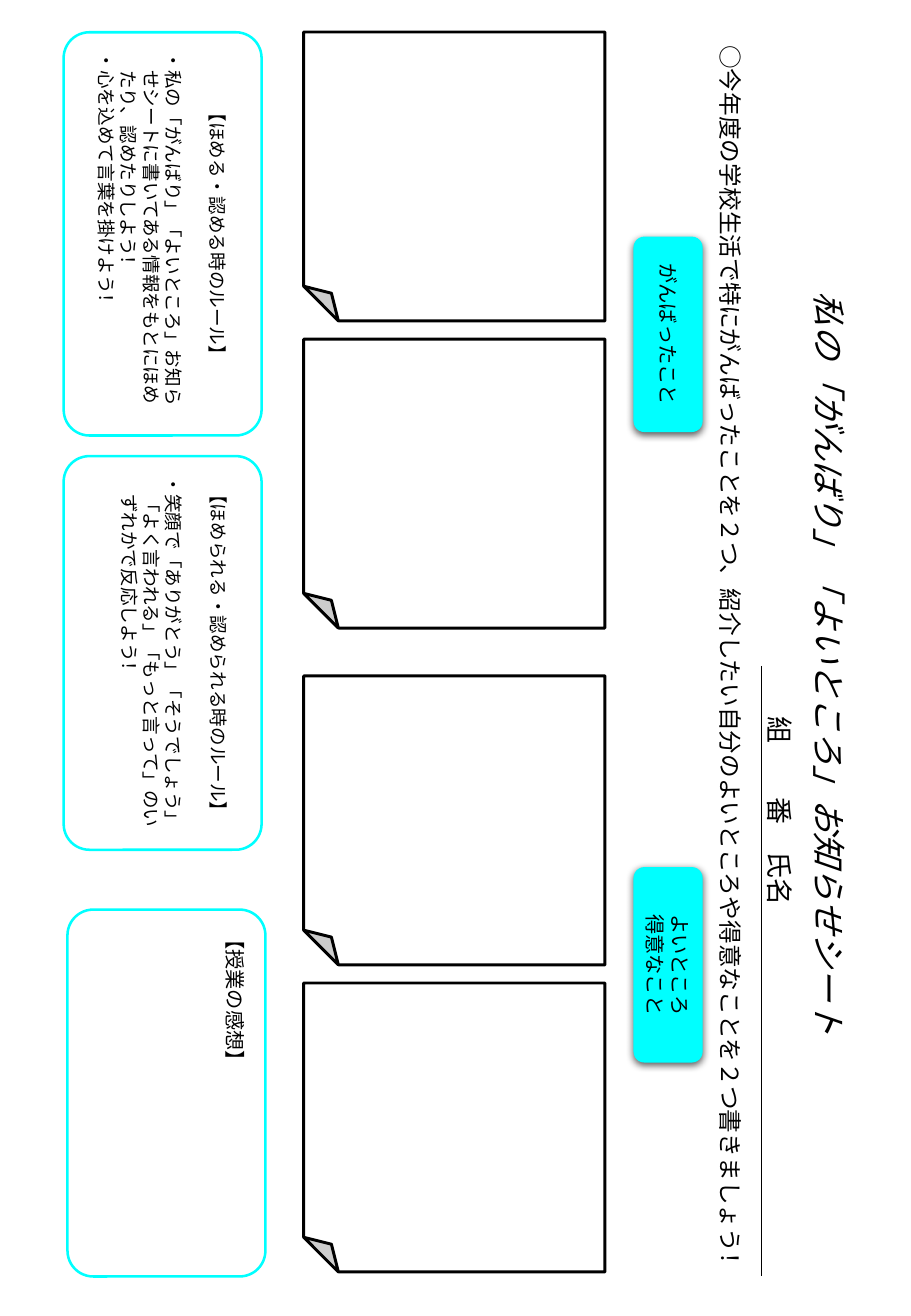
"""Build the rotated worksheet on which pupils share their efforts and strengths."""
import pptx
import pptx.dml.color
import pptx.enum.shapes
import pptx.enum.text
import pptx.oxml
import pptx.oxml.ns
import pptx.util
from lxml import etree

Cm = pptx.util.Cm
Pt = pptx.util.Pt
Align = pptx.enum.text.PP_ALIGN
Anchor = pptx.enum.text.MSO_ANCHOR
Preset = pptx.enum.shapes.MSO_SHAPE
qn = pptx.oxml.ns.qn
FONT = "Noto Sans CJK JP"
BLACK, WHITE, CYAN = "000000", "FFFFFF", "00FFFF"


def color(value):
    return pptx.dml.color.RGBColor.from_string(value)


def write(shape, lines, size, alignment=Align.LEFT, italic=False):
    frame = shape.text_frame
    frame.auto_size = pptx.enum.text.MSO_AUTO_SIZE.NONE
    frame.word_wrap = True
    frame.vertical_anchor = Anchor.MIDDLE
    for index, line in enumerate(lines):
        paragraph = frame.paragraphs[0] if index == 0 else frame.add_paragraph()
        paragraph.alignment = alignment
        paragraph.line_spacing = Pt(size * 1.2)
        run = paragraph.add_run()
        run.text = line
        run.font.name = FONT
        run.font.size = Pt(size)
        run.font.italic = italic
        run.font.color.rgb = color(BLACK)
        etree.SubElement(run.font._element, qn("a:ea"), typeface=FONT)


presentation = pptx.Presentation()
presentation.slide_width = Cm(19.05)
presentation.slide_height = Cm(27.51)
slide = presentation.slides.add_slide(presentation.slide_layouts[5])

title = slide.shapes.title
name_box = slide.shapes.add_textbox(0, 0, 0, 0)
instruction = slide.shapes.add_textbox(0, 0, 0, 0)
for shape, center_x, center_y, length, depth, text, size in [
    (title, 17.35, 13.92, 16.15, 1.12, "私の「がんばり」「よいところ」お知らせシート", 20),
    (name_box, 16.32, 21.12, 12.78, 0.94, "組\t番\t氏名", 16),
    (instruction, 15.28, 13.94, 26.49, 0.86,
     "○今年度の学校生活で特にがんばったことを２つ、紹介したい自分のよいところや得意なことを２つ書きましょう！", 14),
]:
    shape.left, shape.top = Cm(center_x - length / 2), Cm(center_y - depth / 2)
    shape.width, shape.height = Cm(length), Cm(depth)
    shape.rotation = 90
    write(shape, [text], size, italic=shape is title)

name_properties = name_box.text_frame.paragraphs[0]._p.get_or_add_pPr()
tab_list = etree.SubElement(name_properties, qn("a:tabLst"))
for position in (48, 80):
    etree.SubElement(tab_list, qn("a:tab"), pos=str(Pt(position)), algn="l")

name_line = slide.shapes.add_connector(
    pptx.enum.shapes.MSO_CONNECTOR.STRAIGHT, Cm(15.93), Cm(13.92), Cm(15.93), Cm(26.67))
name_line.line.color.rgb = color(BLACK)
name_line.line.width = Pt(0.5)
etree.SubElement(name_line._element.spPr, qn("a:effectLst"))

panels = {}
for name, preset, corner, center_x, center_y, length, depth, fill, outline, width in [
    ("effort", Preset.ROUNDED_RECTANGLE, 0.15, 13.97, 6.99, 4.06, 1.42, CYAN, CYAN, 0.75),
    ("strength", Preset.ROUNDED_RECTANGLE, 0.15, 13.97, 20.17, 4.06, 1.42, CYAN, CYAN, 0.75),
    ("praising", Preset.ROUNDED_RECTANGLE, 0.13, 3.4, 4.89, 8.43, 4.14, WHITE, CYAN, 1.5),
    ("praised", Preset.ROUNDED_RECTANGLE, 0.13, 3.4, 13.65, 8.23, 4.14, WHITE, CYAN, 1.5),
    ("impressions", Preset.ROUNDED_RECTANGLE, 0.13, 3.48, 22.85, 7.67, 4.14, WHITE, CYAN, 1.5),
] + [
    (f"card {pair} {step}", Preset.FOLDED_CORNER, 0.12, 9.5, pair + 6.42 * step,
     6.04, 6.3, WHITE, BLACK, 1.75)
    for pair in (3.69, 17.15) for step in range(2)
]:
    shape = slide.shapes.add_shape(
        preset, Cm(center_x - length / 2), Cm(center_y - depth / 2), Cm(length), Cm(depth))
    shape.rotation = 90
    geometry = shape._element.spPr.find(qn("a:prstGeom"))
    for child in list(geometry):
        geometry.remove(child)
    adjustments = etree.SubElement(geometry, qn("a:avLst"))
    etree.SubElement(adjustments, qn("a:gd"), name="adj", fmla=f"val {round(corner * 100000)}")
    shape.shadow.inherit = False
    shape.fill.solid()
    shape.fill.fore_color.rgb = color(fill)
    shape.line.color.rgb = color(outline)
    shape.line.width = Pt(width)
    panels[name] = shape

for name, lines in [("effort", ["がんばったこと"]), ("strength", ["よいところ", "得意なこと"])]:
    label = panels[name]
    write(label, lines, 12, Align.CENTER)
    label.text_frame.word_wrap = False
    effects = label._element.spPr.find(qn("a:effectLst"))
    shadow = etree.SubElement(
        effects, qn("a:outerShdw"), blurRad=str(Pt(4.5)), dist=str(Pt(1.5)),
        dir="5400000", rotWithShape="0")
    shadow_color = etree.SubElement(shadow, qn("a:srgbClr"), val=BLACK)
    etree.SubElement(shadow_color, qn("a:alpha"), val="63000")

for name, lines in [
    ("praising", ["【ほめる・認める時のルール】", "・私の「がんばり」「よいところ」お知ら",
                  "せシートに書いてある情報をもとにほめ", "たり、認めたりしよう！",
                  "・心を込めて言葉を掛けよう！"]),
    ("praised", ["【ほめられる・認められる時のルール】", "・笑顔で「ありがとう」「そうでしょう」",
                 "「よく言われる」「もっと言って」のい", "ずれかで反応しよう！"]),
]:
    write(panels[name], lines, 11)
    heading, *items = panels[name].text_frame.paragraphs
    heading.alignment = Align.CENTER
    heading.space_after = Pt(13.2)
    for paragraph in items:
        if not paragraph.text.startswith("・"):
            paragraph._p.get_or_add_pPr().set("marL", str(Pt(11)))
panels["praised"].text_frame.margin_bottom = Cm(0.6)

write(panels["impressions"], ["【授業の感想】"], 12)
panels["impressions"].text_frame.vertical_anchor = Anchor.TOP
panels["impressions"].text_frame.margin_top = Cm(0.22)

presentation.save("out.pptx")
